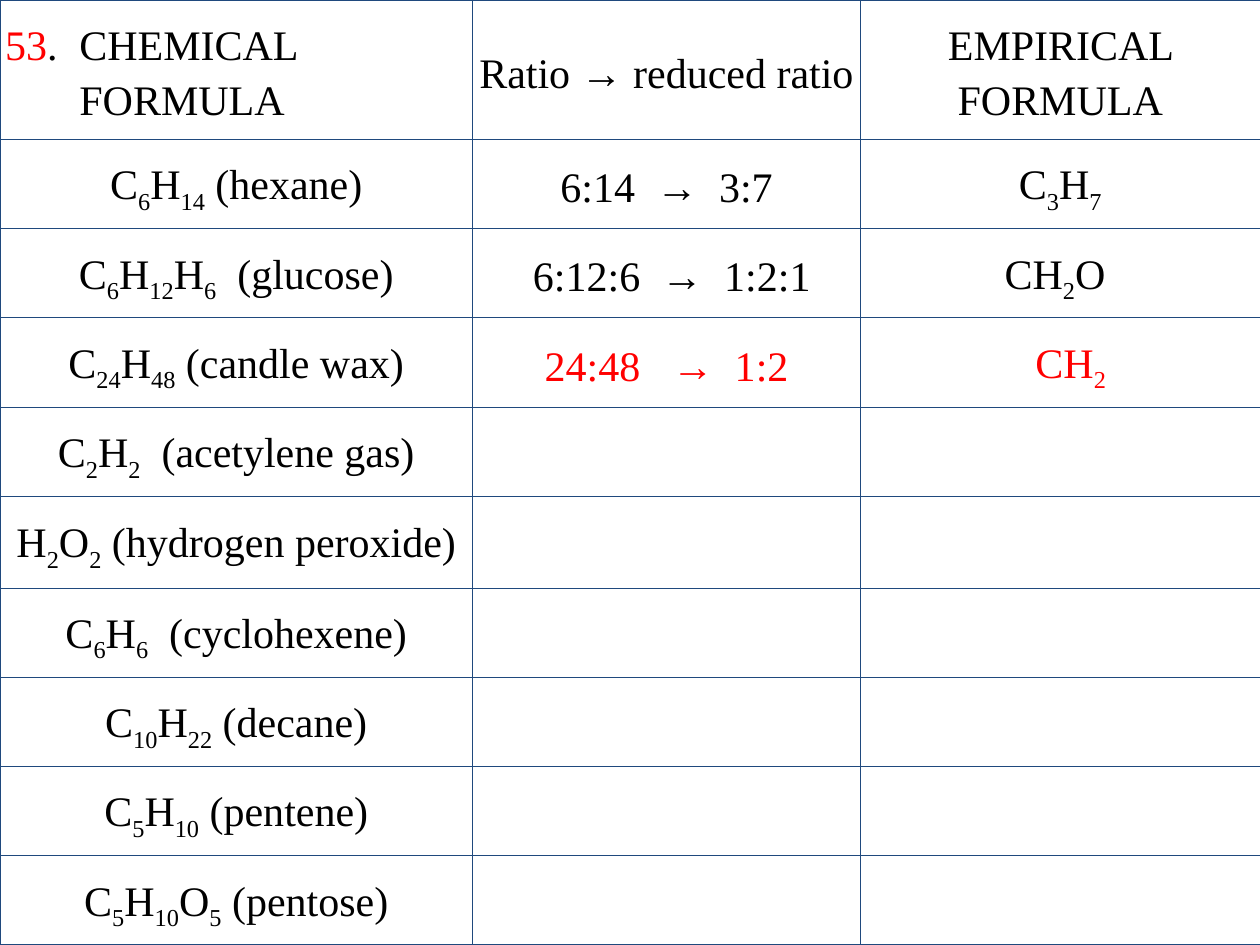
import itertools
from dataclasses import dataclass

import pptx
import pptx.dml.color
import pptx.enum.text
import pptx.oxml
import pptx.oxml.ns
import pptx.util

Inches = pptx.util.Inches
Pt = pptx.util.Pt
ALIGN = pptx.enum.text.PP_ALIGN


@dataclass(frozen=True)
class Theme:
    font: str = "Times New Roman"
    size: int = 24
    text: str = "000000"
    accent: str = "FF0000"
    border: str = "1F497D"
    border_width: float = 0.5
    inset: float = 0.04
    hanging: float = 0.59
    line_spacing: float = 1.19
    space_after: int = 6


THEME = Theme()
COLUMNS = [3.75, 3.08, 3.17]
ROWS = [1.11] + [0.71] * 4 + [0.73] + [0.71] * 4
HEADINGS = ["Ratio → reduced ratio", "EMPIRICAL FORMULA"]
ANSWERED = [
    ("C6H14 (hexane)", "6:14  →  3:7", "C3H7", THEME.text),
    ("C6H12H6  (glucose)", " 6:12:6  →  1:2:1", "CH2O ", THEME.text),
    ("C24H48 (candle wax)", "24:48   →  1:2", "  CH2", THEME.accent),
]
UNANSWERED = [
    "C2H2  (acetylene gas)",
    "H2O2 (hydrogen peroxide)",
    "C6H6  (cyclohexene)",
    "C10H22 (decane)",
    "C5H10 (pentene)",
    "C5H10O5 (pentose)",
]


def add_run(paragraph, text, color=THEME.text, subscript=False):
    run = paragraph.add_run()
    run.text = text
    formats = {"name": THEME.font, "size": Pt(THEME.size), "bold": False}
    for name, value in formats.items():
        setattr(run.font, name, value)
    run.font.color.rgb = pptx.dml.color.RGBColor.from_string(color)
    if subscript:
        run.font._element.set("baseline", "-25000")


def start_paragraph(cell, alignment=ALIGN.CENTER):
    paragraph = cell.text_frame.paragraphs[0]
    formats = {
        "alignment": alignment,
        "line_spacing": THEME.line_spacing,
        "space_after": Pt(THEME.space_after),
    }
    for name, value in formats.items():
        setattr(paragraph, name, value)
    return paragraph


def write_text(cell, text, color=THEME.text):
    add_run(start_paragraph(cell), text, color)


def write_formula(cell, text, color=THEME.text):
    """Write a chemical formula with every number as a subscript."""
    paragraph = start_paragraph(cell)
    for is_number, characters in itertools.groupby(text, str.isdigit):
        add_run(paragraph, "".join(characters), color, is_number)


def write_numbered_heading(cell):
    paragraph = start_paragraph(cell, ALIGN.LEFT)
    properties = paragraph._p.get_or_add_pPr()
    properties.set("marL", str(Inches(THEME.hanging)))
    properties.set("indent", str(-Inches(THEME.hanging)))
    add_run(paragraph, "53", THEME.accent)
    add_run(paragraph, ".\tCHEMICAL")
    paragraph.add_line_break()
    add_run(paragraph, "FORMULA")


def format_cell(cell):
    formats = {f"margin_{side}": Inches(THEME.inset)
               for side in ("left", "right", "top", "bottom")}
    formats["vertical_anchor"] = pptx.enum.text.MSO_ANCHOR.MIDDLE
    for name, value in formats.items():
        setattr(cell, name, value)
    cell.fill.background()
    properties = cell._tc.get_or_add_tcPr()
    for position, edge in enumerate(("lnL", "lnR", "lnT", "lnB")):
        properties.insert(position, pptx.oxml.parse_xml(
            f'<a:{edge} {pptx.oxml.ns.nsdecls("a")} w="{Pt(THEME.border_width)}">'
            f'<a:solidFill><a:srgbClr val="{THEME.border}"/></a:solidFill></a:{edge}>'))


def add_formula_table(slide, left, top, width, height):
    """Fill the given box with the worksheet of formulas and ratios."""
    table = slide.shapes.add_table(
        len(ROWS), len(COLUMNS), left, top, width, height).table
    table.first_row = table.horz_banding = False
    for column, share in zip(table.columns, COLUMNS):
        column.width = int(width * share / sum(COLUMNS))
    for row, share in zip(table.rows, ROWS):
        row.height = int(height * share / sum(ROWS))
    for cell in table.iter_cells():
        format_cell(cell)

    write_numbered_heading(table.cell(0, 0))
    for column, heading in enumerate(HEADINGS, start=1):
        write_text(table.cell(0, column), heading)
    for row, (formula, ratio, empirical, color) in enumerate(ANSWERED, start=1):
        write_formula(table.cell(row, 0), formula)
        write_text(table.cell(row, 1), ratio, color)
        write_formula(table.cell(row, 2), empirical, color)
    for row, formula in enumerate(UNANSWERED, start=1 + len(ANSWERED)):
        write_formula(table.cell(row, 0), formula)


def main():
    presentation = pptx.Presentation()
    presentation.slide_width = Inches(10)
    presentation.slide_height = Inches(7.5)
    slide = presentation.slides.add_slide(presentation.slide_layouts[6])
    add_formula_table(
        slide, 0, 0, presentation.slide_width, presentation.slide_height)
    presentation.save("out.pptx")


if __name__ == "__main__":
    main()
